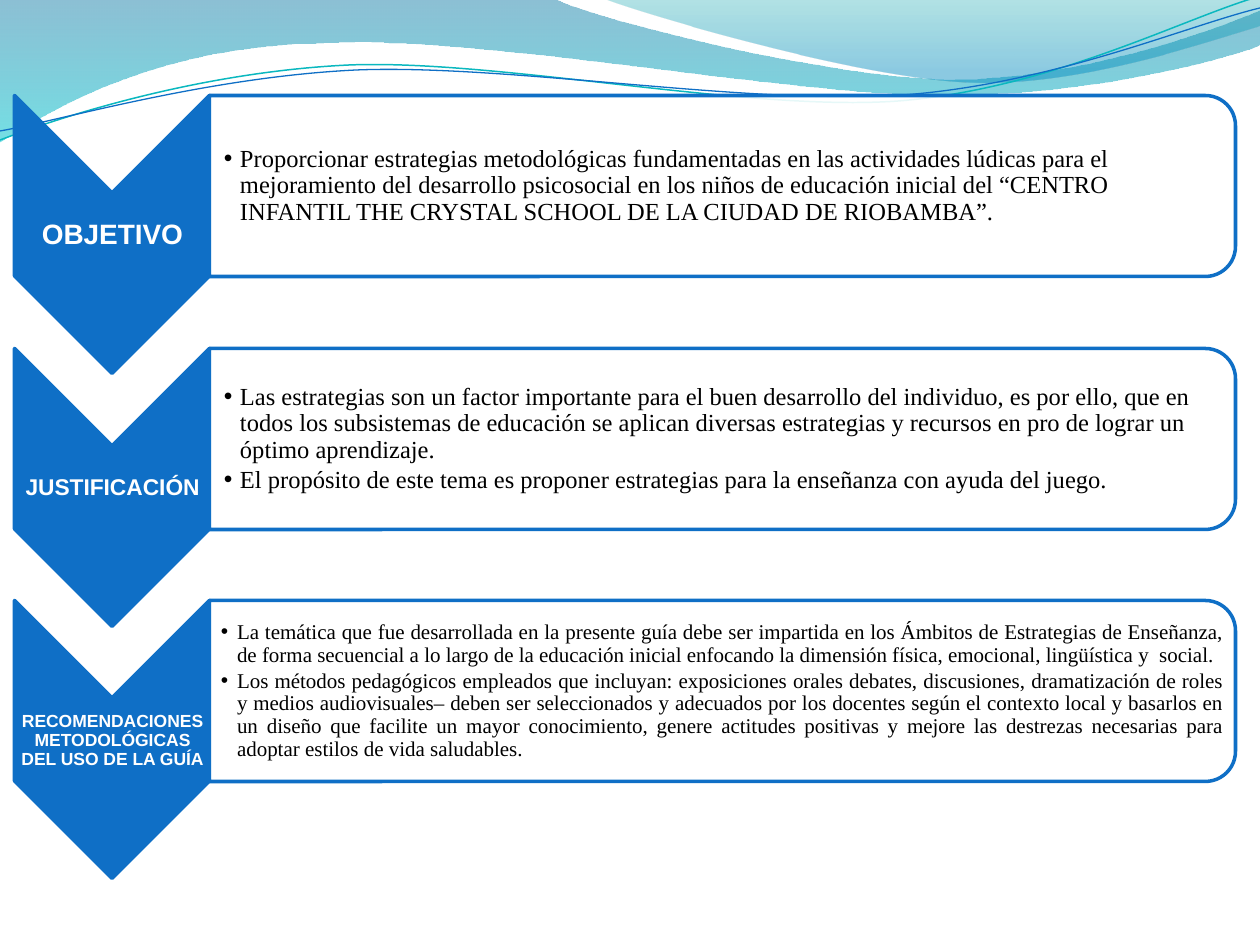
from dataclasses import dataclass

from lxml.etree import SubElement
from pptx import Presentation
from pptx.dml.color import RGBColor
from pptx.enum.shapes import MSO_SHAPE as Shape
from pptx.enum.text import MSO_ANCHOR as Anchor, MSO_AUTO_SIZE as AutoSize, PP_ALIGN as Align
from pptx.oxml.ns import qn
from pptx.util import Emu, Pt

SCALE = 914400 / 126
TWO_ROWS = 505
BULLET_INDENT = 16


@dataclass(frozen=True)
class Theme:
    blue: str = "0F6FC6"
    teal: str = "0AB8BF"
    white: str = "FFFFFF"
    black: str = "000000"
    heading_font: str = "Arial"
    body_font: str = "Times New Roman"
    outline: float = 2
    heading_sizes: tuple = (16, 13, 10)
    body_sizes: tuple = (14, 14, 12)


@dataclass(frozen=True)
class Stop:
    position: float
    color: str
    alpha: int


@dataclass(frozen=True)
class Wave:
    start: tuple
    segments: tuple
    stops: tuple = ()
    line: str = ""
    width: float = 0


@dataclass(frozen=True)
class Section:
    heading: str
    items: tuple
    placeholder: int
    align: Align = Align.LEFT
    inset: int = 14


THEME = Theme()

WAVES = (
    Wave((-1, 0), (
        ((554, -1),),
        ((600, 21), (837, 79), (955, 79)),
        ((1075, 79), (1207, 33), (1260, 11)),
        ((1261, 45),),
        ((1239, 55), (1096, 96), (940, 95)),
        ((783, 95), (481, 35), (324, 43)),
        ((163, 45), (58, 105), (-1, 142)),
    ), stops=(Stop(0, "0074A1", 45), Stop(1, "00C6CF", 55))),
    Wave((604, -1), (
        ((641, 14), (859, 78), (969, 82)),
        ((1079, 87), (1211, 40), (1260, 26)),
        ((1260, 0),),
    ), stops=(Stop(0, "00A1A9", 30), Stop(0.8, "008BBF", 45))),
    Wave((0, 140), (
        ((60, 117), (199, 72), (349, 65)),
        ((498, 59), (747, 112), (898, 101)),
        ((1050, 89), (1182, 19), (1257, -3)),
    ), line=THEME.teal, width=0.85),
    Wave((0, 131), (
        ((59, 121), (207, 77), (357, 70)),
        ((508, 64), (752, 106), (903, 95)),
        ((1053, 84), (1186, 26), (1260, 8)),
    ), line=THEME.blue, width=0.75),
)

SECTIONS = (
    Section("OBJETIVO", (
        "Proporcionar estrategias metodológicas fundamentadas en las actividades lúdicas para el mejoramiento del desarrollo psicosocial en los niños de educación inicial del “CENTRO INFANTIL THE CRYSTAL SCHOOL DE LA CIUDAD DE RIOBAMBA”.",
    ), 1),
    Section("JUSTIFICACIÓN", (
        "Las estrategias son un factor importante para el buen desarrollo del individuo, es por ello, que en todos los subsistemas de educación se aplican diversas estrategias y recursos en pro de lograr un óptimo aprendizaje.",
        "El propósito de este tema es proponer estrategias para la enseñanza con ayuda del juego.",
    ), 2),
    Section("RECOMENDACIONES METODOLÓGICAS DEL USO DE LA GUÍA", (
        "La temática que fue desarrollada en la presente guía debe ser impartida en los Ámbitos de Estrategias de Enseñanza, de forma secuencial a lo largo de la educación inicial enfocando la dimensión física, emocional, lingüística y  social. ",
        "Los métodos pedagógicos empleados que incluyan: exposiciones orales debates, discusiones, dramatización de roles y medios audiovisuales– deben ser seleccionados y adecuados por los docentes según el contexto local y basarlos en un diseño que facilite un mayor conocimiento, genere actitudes positivas y mejore las destrezas necesarias para adoptar estilos de vida saludables.",
    ), 4, Align.JUSTIFY, 11),
)


def px(value: float) -> Emu:
    return Emu(round(value * SCALE))


def rgb(color: str) -> RGBColor:
    return RGBColor.from_string(color)


def set_alpha(color_element, percent: int) -> None:
    SubElement(color_element, qn("a:alpha")).set("val", str(percent * 1000))


def bend_segments(shape, segments: tuple) -> None:
    outline = next(shape.element.iter(qn("a:path")))
    lines = iter(outline.findall(qn("a:lnTo")))
    for segment in segments:
        parts = [next(lines) for _ in segment]
        if len(parts) == 3:
            parts[0].tag = qn("a:cubicBezTo")
            for part in parts[1:]:
                parts[0].append(part[0])
                outline.remove(part)


def draw_wave(page, wave: Wave) -> None:
    builder = page.shapes.build_freeform(*map(px, wave.start))
    builder.add_line_segments(
        [(px(x), px(y)) for segment in wave.segments for x, y in segment],
        close=bool(wave.stops))
    shape = builder.convert_to_shape()
    bend_segments(shape, wave.segments)
    shape.shadow.inherit = False
    if not wave.stops:
        shape.fill.background()
        shape.line.color.rgb = rgb(wave.line)
        shape.line.width = Pt(wave.width)
        return
    shape.line.fill.background()
    shape.fill.gradient()
    shape.fill.gradient_angle = 270
    for target, stop in zip(shape.fill.gradient_stops, wave.stops):
        target.position = stop.position
        target.color.rgb = rgb(stop.color)
    for element, stop in zip(shape.element.spPr.iter(qn("a:srgbClr")), wave.stops):
        set_alpha(element, stop.alpha)


def draw_turned(page, kind: Shape, area: tuple, color: str):
    shape = page.shapes.add_shape(kind, *map(px, area))
    shape.rotation = 90
    shape.shadow.inherit = False
    shape.fill.solid()
    shape.fill.fore_color.rgb = rgb(color)
    shape.line.color.rgb = rgb(THEME.blue)
    shape.line.width = Pt(THEME.outline)
    return shape


def prepare_frame(box, left: int, right: int):
    frame = box.text_frame
    frame.word_wrap = True
    frame.auto_size = AutoSize.NONE
    frame.vertical_anchor = Anchor.MIDDLE
    frame.margin_left, frame.margin_right = px(left), px(right)
    frame.margin_top = frame.margin_bottom = px(1)
    return frame


def format_para(para, align: Align, font: str, size: int, color: str, bold: bool) -> None:
    para.alignment = align
    para.line_spacing = 0.9
    para.space_before = Pt(0)
    para.space_after = Pt(size * 0.15)
    for span in para.runs:
        span.font.name = font
        span.font.size = Pt(size)
        span.font.bold = bold
        span.font.color.rgb = rgb(color)


def add_bullet(para) -> None:
    para.level = 1
    properties = para._p.get_or_add_pPr()
    properties.set("marL", str(px(BULLET_INDENT)))
    properties.set("indent", str(px(-BULLET_INDENT)))
    SubElement(properties, qn("a:buChar")).set("char", "•")


def draw_section(page, section: Section, row: int, box) -> None:
    top = (row * TWO_ROWS + 1) // 2
    draw_turned(page, Shape.CHEVRON, (-27, 137 + top, 278, 195), THEME.blue)

    label = page.shapes.add_textbox(*map(px, (15, 194 + top, 195, 83)))
    frame = prepare_frame(label, 1, 1)
    frame.text = section.heading
    format_para(frame.paragraphs[0], Align.CENTER, THEME.heading_font,
                THEME.heading_sizes[row], THEME.white, True)

    panel = draw_turned(page, Shape.ROUND_2_SAME_RECTANGLE,
                        (632, -327 + top, 181, 1026), THEME.white)
    set_alpha(panel.element.spPr.find(qn("a:solidFill"))[0], 90)

    box.left, box.top, box.width, box.height = map(px, (210, 104 + top, 1017, 164))
    page.shapes.element.append(box.element)
    frame = prepare_frame(box, section.inset, 2)
    frame.text = "\n".join(section.items)
    for para in frame.paragraphs:
        format_para(para, section.align, THEME.body_font,
                    THEME.body_sizes[row], THEME.black, False)
        add_bullet(para)


def main() -> None:
    deck = Presentation()
    deck.slide_width, deck.slide_height = px(1260), px(945)
    page = deck.slides.add_slide(deck.slide_layouts[4])
    boxes = {box.placeholder_format.idx: box for box in page.placeholders}
    for wave in WAVES:
        draw_wave(page, wave)
    for row, section in enumerate(SECTIONS):
        draw_section(page, section, row, boxes.pop(section.placeholder))
    for unused in boxes.values():
        unused.element.getparent().remove(unused.element)
    deck.save("out.pptx")


if __name__ == "__main__":
    main()
